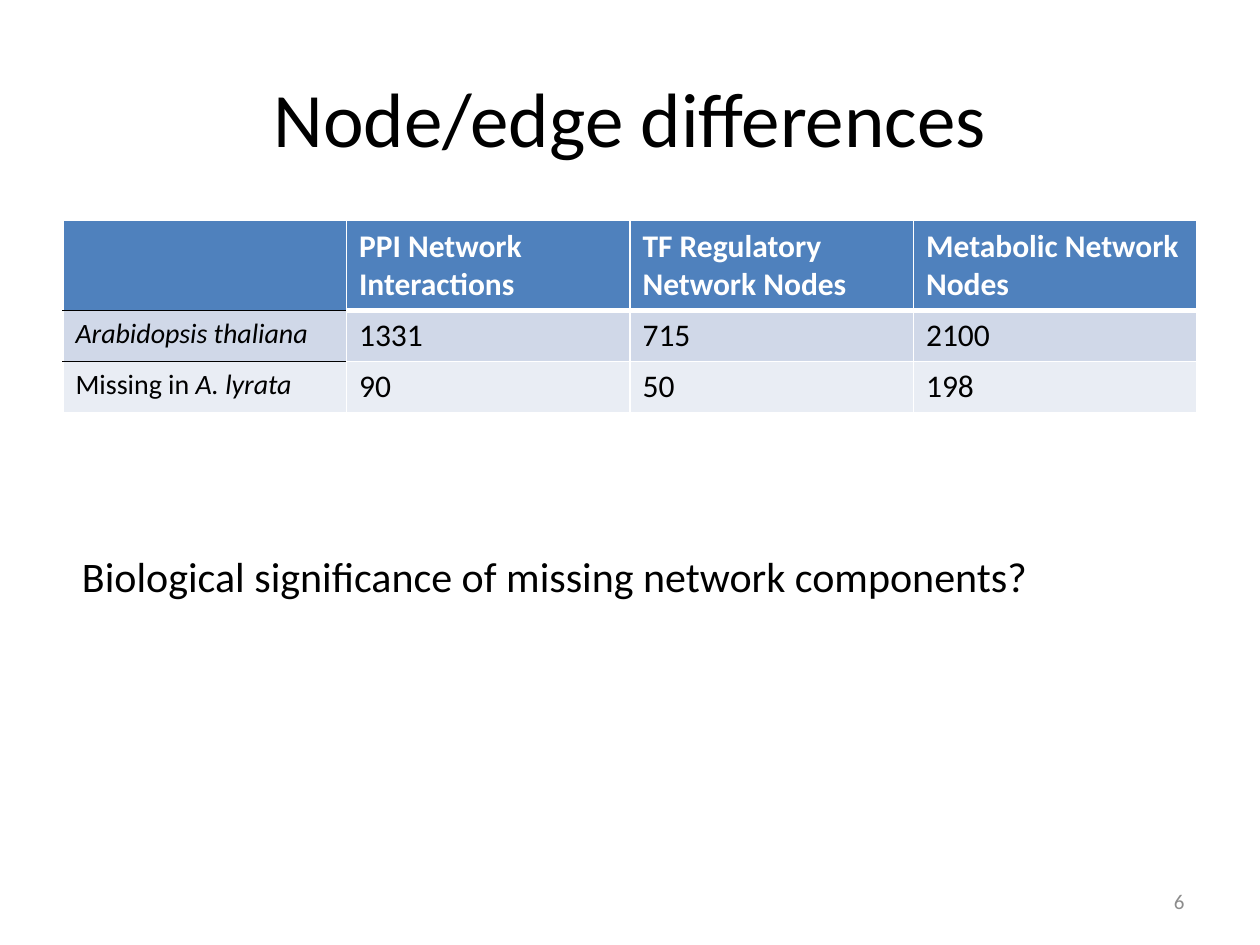
from lxml.etree import SubElement
from pptx import Presentation
from pptx.dml.color import RGBColor
from pptx.enum.text import MSO_ANCHOR, MSO_AUTO_SIZE, PP_ALIGN
from pptx.oxml.ns import qn
from pptx.util import Cm, Pt

FONT = "Calibri"
BLACK, WHITE, GREY = "000000", "FFFFFF", "8C8C8C"
FILLS = ["4F81BD", "D0D8E8", "E9EDF4"]
HIGHS = [1.78, 1.03, 1.03]
ROWS = [
    ["", "PPI Network Interactions", "TF Regulatory Network Nodes", "Metabolic Network Nodes"],
    ["Arabidopsis thaliana", "1331", "715", "2100"],
    ["Missing in ", "90", "50", "198"],
]


def color(code):
    return RGBColor.from_string(code)


def style(run, size, code=BLACK, bold=False, slant=False):
    font = run.font
    font.name, font.size = FONT, Pt(size)
    font.bold, font.italic = bold, slant
    font.color.rgb = color(code)


def place(shape, left, top, width, height):
    shape.left, shape.top = Cm(left), Cm(top)
    shape.width, shape.height = Cm(width), Cm(height)


def write(shape, text, size, align, code=BLACK):
    para = shape.text_frame.paragraphs[0]
    para.text = text
    para.alignment = align
    style(para.runs[0], size, code)


def add_title(slide, text):
    title = slide.shapes.title
    place(title, 1.27, 0.76, 22.86, 3.18)
    title.text_frame.vertical_anchor = MSO_ANCHOR.MIDDLE
    write(title, text, 44, PP_ALIGN.CENTER)


def add_text(slide, text, spot, size, align, code=BLACK, wrap=True):
    box = slide.shapes.add_textbox(*map(Cm, spot))
    frame = box.text_frame
    frame.word_wrap = wrap
    if wrap:
        frame.vertical_anchor = MSO_ANCHOR.MIDDLE
    else:
        frame.auto_size = MSO_AUTO_SIZE.SHAPE_TO_FIT_TEXT
    write(box, text, size, align, code)


def add_edge(cell, side, code, width):
    props = cell._tc.get_or_add_tcPr()
    line = SubElement(props, qn(f"a:ln{side}"), w=str(Pt(width)))
    fill = SubElement(line, qn("a:solidFill"))
    SubElement(fill, qn("a:srgbClr"), val=code)


def rule(row, col):
    if row not in (1, 2):
        return WHITE, 1
    if col == 0:
        return BLACK, 1
    return WHITE, 3 if row == 1 else 1


def fill_cell(cell, row, col):
    for side in "LR":
        add_edge(cell, side, WHITE, 1)
    add_edge(cell, "T", *rule(row, col))
    add_edge(cell, "B", *rule(row + 1, col))
    cell.fill.solid()
    cell.fill.fore_color.rgb = color(FILLS[row])
    cell.text_frame.text = ROWS[row][col]
    head = row == 0
    for run in cell.text_frame.paragraphs[0].runs:
        style(run, 18 if head or col else 16, WHITE if head else BLACK,
              bold=head, slant=row == 1 and col == 0)


def add_grid(slide):
    count = len(ROWS[0])
    frame = slide.shapes.add_table(len(ROWS), count, Cm(1.27), Cm(4.45), Cm(22.86), Cm(sum(HIGHS)))
    table = frame.table
    for row, high in enumerate(HIGHS):
        table.rows[row].height = Cm(high)
        for col in range(count):
            fill_cell(table.cell(row, col), row, col)
    run = table.cell(2, 0).text_frame.paragraphs[0].add_run()
    run.text = "A. lyrata"
    style(run, 16, slant=True)


def main():
    deck = Presentation()
    deck.slide_width, deck.slide_height = Cm(25.4), Cm(19.05)
    slide = deck.slides.add_slide(deck.slide_layouts[5])
    add_title(slide, "Node/edge differences")
    add_grid(slide)
    add_text(slide, "Biological significance of missing network components?",
             (1.3, 10.97, 19.76, 1.28), 24, PP_ALIGN.CENTER, wrap=False)
    add_text(slide, "6", (18.2, 17.66, 5.93, 1.01), 12, PP_ALIGN.RIGHT, GREY)
    deck.save("out.pptx")


if __name__ == "__main__":
    main()
